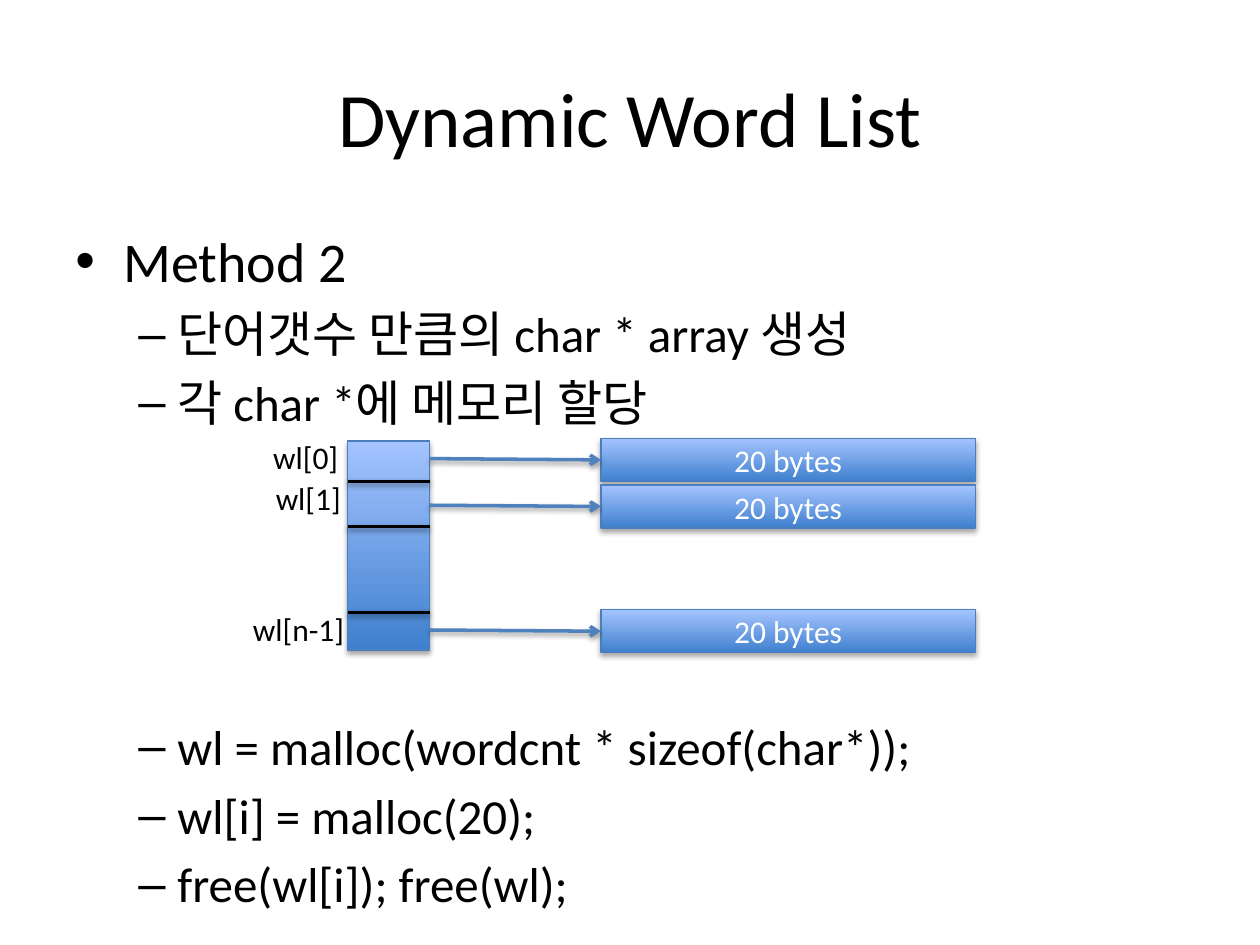
"""Build the Dynamic Word List slide."""
from dataclasses import dataclass

from lxml.etree import SubElement
from pptx import Presentation
from pptx.dml.color import RGBColor as RGB
from pptx.enum.shapes import MSO_CONNECTOR as CONN, MSO_SHAPE as SHAPE
from pptx.enum.text import MSO_ANCHOR as ANCHOR, MSO_AUTO_SIZE as AUTO, PP_ALIGN as ALIGN
from pptx.oxml.ns import qn
from pptx.util import Inches, Pt


@dataclass(frozen=True)
class Theme:
    """Colours, font and type sizes of the slide."""
    font: str = "Calibri"
    black: RGB = RGB(0, 0, 0)
    white: RGB = RGB(255, 255, 255)
    dark: RGB = RGB(0x3F, 0x80, 0xCE)
    light: RGB = RGB(0xA4, 0xC4, 0xFF)
    edge: RGB = RGB(0x4B, 0x7E, 0xBC)
    arrow: RGB = RGB(0x4F, 0x81, 0xBD)
    title: int = 44
    head: int = 32
    item: int = 28
    label: int = 18


T = Theme()
BODY = [
    (0, "Method 2", 6.4),
    (1, "단어갯수 만큼의 char * array 생성", 5.6),
    (1, "각 char *에 메모리 할당", 5.6),
    (1, "wl = malloc(wordcnt * sizeof(char*));", 163),
    (1, "wl[i] = malloc(20);", 5.6),
    (1, "free(wl[i]); free(wl);", 5.6),
]
LEVELS = [("•", 0.38, 0.38, T.head), ("–", 0.81, 0.31, T.item)]
ARRAY_LEFT, ARRAY_RIGHT, BLOCK_LEFT = 2.76, 3.41, 4.77
DIVIDERS = [3.82, 4.18, 4.86]
LABELS = [("wl[0]", 2.07, 3.43, 0.72), ("wl[1]", 2.09, 3.75, 0.72), ("wl[n-1]", 1.91, 4.79, 0.93)]
BLOCK_TOPS = [3.48, 3.85, 4.84]


def box(*lengths):
    """Return lengths in inches as slide units."""
    return [Inches(v) for v in lengths]


def add_run(p, text, size, color=T.black):
    """Add one formatted run to a paragraph."""
    r = p.add_run()
    r.text = text
    r.font.name, r.font.size, r.font.color.rgb = T.font, Pt(size), color


def add_shadow(s, distance, opacity):
    """Give a shape or connector a soft shadow that falls downwards."""
    spPr = s._element.spPr
    effects = spPr.find(qn("a:effectLst"))
    if effects is None:
        effects = SubElement(spPr, qn("a:effectLst"))
    shadow = SubElement(effects, qn("a:outerShdw"), blurRad=str(Pt(3.1)),
                        dist=str(Pt(distance)), dir="5400000", rotWithShape="0")
    color = SubElement(shadow, qn("a:srgbClr"), val=str(T.black))
    SubElement(color, qn("a:alpha"), val=str(opacity * 1000))


def add_title(slide, text):
    """Place and fill the title placeholder."""
    s = slide.shapes.title
    s.left, s.top, s.width, s.height = box(0.5, 0.3, 9, 1.25)
    s.text_frame.vertical_anchor = ANCHOR.MIDDLE
    p = s.text_frame.paragraphs[0]
    p.alignment = ALIGN.CENTER
    add_run(p, text, T.title)


def add_body(slide, items):
    """Add the bulleted outline, leaving room for the diagram."""
    tf = slide.shapes.add_textbox(*box(0.5, 1.75, 9, 5.5)).text_frame
    tf.word_wrap = True
    for i, (level, text, gap) in enumerate(items):
        p = tf.add_paragraph() if i else tf.paragraphs[0]
        mark, margin, hang, size = LEVELS[level]
        p.level, p.space_before = level, Pt(gap)
        pPr = p._p.get_or_add_pPr()
        pPr.set("marL", str(Inches(margin)))
        pPr.set("indent", str(-Inches(hang)))
        SubElement(pPr, qn("a:buFont"), typeface="Arial")
        SubElement(pPr, qn("a:buChar"), char=mark)
        add_run(p, text, size)


def add_block(slide, left, top, width, height, text=None):
    """Add a gradient rectangle with optional centred text."""
    s = slide.shapes.add_shape(SHAPE.RECTANGLE, *box(left, top, width, height))
    s.fill.gradient()
    s.fill.gradient_angle = 90
    for stop, color, position in zip(s.fill.gradient_stops, (T.dark, T.light), (0, 1)):
        stop.color.rgb, stop.position = color, position
    s.line.color.rgb, s.line.width = T.edge, Pt(0.75)
    s.shadow.inherit = False
    add_shadow(s, 1.8, 35)
    if text:
        tf = s.text_frame
        tf.vertical_anchor = ANCHOR.MIDDLE
        p = tf.paragraphs[0]
        p.alignment = ALIGN.CENTER
        add_run(p, text, T.label, T.white)


def add_line(slide, start, end, color, arrow=False):
    """Add a straight line, with an arrowhead at its end if asked."""
    s = slide.shapes.add_connector(CONN.STRAIGHT, *box(*start, *end))
    s.line.color.rgb, s.line.width = color, Pt(2)
    if arrow:
        SubElement(s._element.spPr.find(qn("a:ln")), qn("a:tailEnd"), type="arrow")
    add_shadow(s, 1.6, 38)


def add_label(slide, text, left, top, width):
    """Add an unwrapped index label."""
    tf = slide.shapes.add_textbox(*box(left, top, width, 0.4)).text_frame
    tf.word_wrap, tf.auto_size = False, AUTO.SHAPE_TO_FIT_TEXT
    add_run(tf.paragraphs[0], text, T.label)


def main():
    """Build and save the slide."""
    prs = Presentation()
    prs.slide_width, prs.slide_height = box(10, 7.5)
    slide = prs.slides.add_slide(prs.slide_layouts[5])
    add_title(slide, "Dynamic Word List")
    add_body(slide, BODY)
    add_block(slide, ARRAY_LEFT, 3.5, ARRAY_RIGHT - ARRAY_LEFT, 1.66)
    for y in DIVIDERS:
        add_line(slide, (ARRAY_LEFT, y), (ARRAY_RIGHT, y), T.black)
    for label in LABELS:
        add_label(slide, *label)
    for top in BLOCK_TOPS:
        add_block(slide, BLOCK_LEFT, top, 2.97, 0.34, "20 bytes")
        add_line(slide, (ARRAY_RIGHT, top + 0.16), (BLOCK_LEFT, top + 0.17), T.arrow, arrow=True)
    prs.save("out.pptx")


if __name__ == "__main__":
    main()
